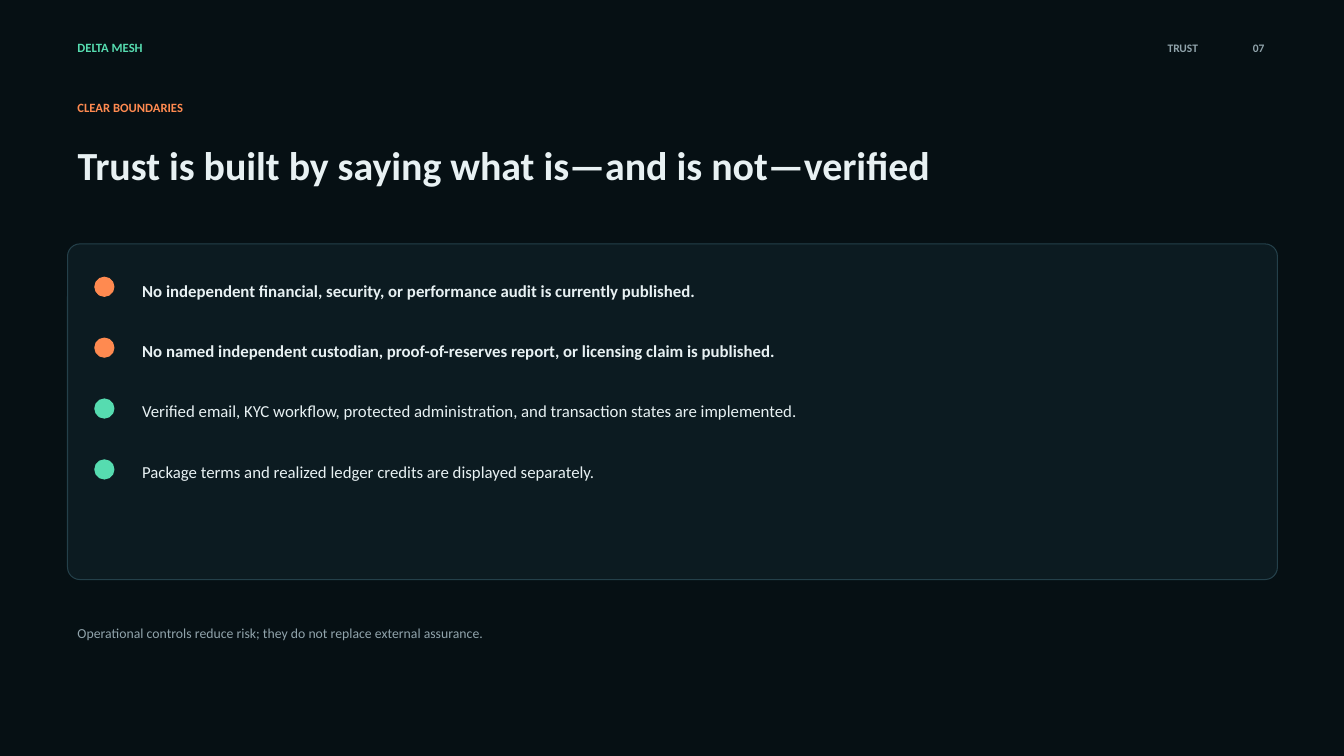
from lxml.etree import SubElement
from pptx import Presentation
from pptx.dml.color import RGBColor
from pptx.enum.shapes import MSO_SHAPE as Shape
from pptx.enum.text import MSO_ANCHOR as Anchor, MSO_AUTO_SIZE as AutoSize, PP_ALIGN as Align
from pptx.oxml.ns import qn
from pptx.util import Inches, Pt

COLORS = {
    "background": "061014",
    "card": "0C1B21",
    "border": "24404A",
    "text": "E8F1F3",
    "muted": "91A4AC",
    "green": "56DCB0",
    "orange": "FF8A50",
}
LEFT = 0.67
FIRST_DOT_TOP = 2.75
DOT_SIZE = 0.19
ROW_PITCH = 0.604
ROW_GAP = 28.8

BOUNDARIES = [
    ("No independent financial, security, or performance audit is currently published.", True),
    ("No named independent custodian, proof-of-reserves report, or licensing claim is published.", True),
    ("Verified email, KYC workflow, protected administration, and transaction states are implemented.", False),
    ("Package terms and realized ledger credits are displayed separately.", False),
]


def rgb(name):
    """Return the named colour."""
    return RGBColor.from_string(COLORS[name])


def place(shape, left, top, width, height):
    """Set the position and size of a shape in inches."""
    shape.left, shape.top = Inches(left), Inches(top)
    shape.width, shape.height = Inches(width), Inches(height)


def add_run(paragraph, text, size, color, bold=False):
    """Add one formatted run to a paragraph."""
    run = paragraph.add_run()
    run.text = text
    run.font.name = "Calibri"
    run.font.size = Pt(size)
    run.font.bold = bold
    run.font.color.rgb = rgb(color)


def prepare_frame(shape, anchor=Anchor.MIDDLE):
    """Give a shape's text frame wrapping, a fixed size and an anchor."""
    frame = shape.text_frame
    frame.word_wrap = True
    frame.auto_size = AutoSize.NONE
    frame.vertical_anchor = anchor
    return frame


def add_label(slide, box, text, size, color, bold=True, align=Align.LEFT):
    """Add a single-line text box."""
    label = slide.shapes.add_textbox(*(Inches(length) for length in box))
    paragraph = prepare_frame(label).paragraphs[0]
    paragraph.alignment = align
    add_run(paragraph, text, size, color, bold)


def add_rounded(slide, box, radius, fill, line):
    """Add a filled rounded rectangle with a thin outline."""
    shape = slide.shapes.add_shape(Shape.ROUNDED_RECTANGLE, *(Inches(length) for length in box))
    shape.adjustments[0] = radius
    shape.shadow.inherit = False
    shape.fill.solid()
    shape.fill.fore_color.rgb = rgb(fill)
    shape.line.color.rgb = rgb(line)
    shape.line.width = Pt(0.75)
    return shape


def fill_title(title, text):
    """Format the title placeholder and write its text."""
    place(title, LEFT, 1.27, 11.46, 0.73)
    paragraph = prepare_frame(title).paragraphs[0]
    paragraph.alignment = Align.LEFT
    add_run(paragraph, text, 28.5, "text", True)


def fill_boundaries(slide, body):
    """Write the list of boundaries, each with its status dot."""
    place(body, 1.31, 2.73, 10.62, 2.2)
    frame = prepare_frame(body, Anchor.TOP)
    for index, (text, is_gap) in enumerate(BOUNDARIES):
        paragraph = frame.add_paragraph() if index else frame.paragraphs[0]
        paragraph.space_before = Pt(ROW_GAP if index else 0)
        properties = paragraph._p.get_or_add_pPr()
        properties.set("marL", "0")
        properties.set("indent", "0")
        SubElement(properties, qn("a:buNone"))
        add_run(paragraph, text, 12, "text", is_gap)
        color = "orange" if is_gap else "green"
        dot_top = FIRST_DOT_TOP + index * ROW_PITCH
        add_rounded(slide, (0.94, dot_top, DOT_SIZE, DOT_SIZE), 0.5, color, color)


def main():
    """Build the slide and save it."""
    presentation = Presentation()
    presentation.slide_width = Inches(13.33)
    presentation.slide_height = Inches(7.5)
    slide = presentation.slides.add_slide(presentation.slide_layouts[1])
    slide.background.fill.solid()
    slide.background.fill.fore_color.rgb = rgb("background")
    title, body = slide.placeholders

    add_label(slide, (LEFT, 0.35, 2.4, 0.25), "DELTA MESH", 9, "green")
    add_label(slide, (9.17, 0.35, 2.81, 0.25), "TRUST", 8.2, "muted", align=Align.RIGHT)
    add_label(slide, (12.08, 0.35, 0.56, 0.25), "07", 8.2, "muted", align=Align.RIGHT)
    add_label(slide, (LEFT, 0.94, 3.65, 0.25), "CLEAR BOUNDARIES", 9, "orange")
    fill_title(title, "Trust is built by saying what is—and is not—verified")

    card = add_rounded(slide, (LEFT, 2.42, 12, 3.33), 0.037, "card", "border")
    card.element.addnext(body.element)
    fill_boundaries(slide, body)

    add_label(slide, (LEFT, 6.09, 11.67, 0.38),
              "Operational controls reduce risk; they do not replace external assurance.",
              9.8, "muted", bold=False)
    presentation.save("out.pptx")


if __name__ == "__main__":
    main()
